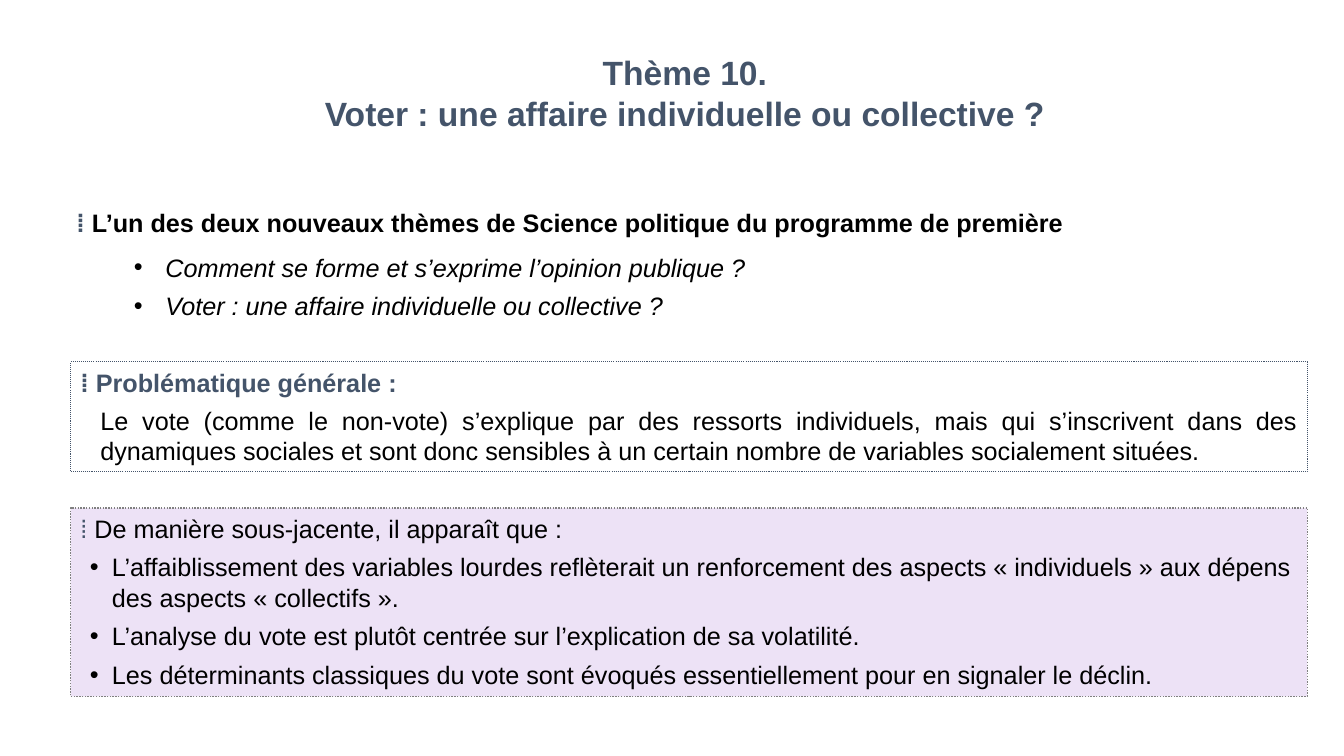
from lxml import etree
from pptx import Presentation
from pptx.dml.color import RGBColor
from pptx.enum import dml, shapes, text
from pptx.oxml.ns import qn
from pptx.util import Pt

HUES = {"slate": "44546A", "black": "000000", "lilac": "EDE2F6", "gray": "808080"}
MARK = "⁞ "


def hue(name):
    return RGBColor.from_string(HUES[name])


def write(shape, lines, size=18, bold=None, italic=None):
    """Fill a shape; each line is (runs, left, hang, bullet, align), runs being (text, colour)."""
    frame = shape.text_frame
    frame.word_wrap = True
    frame.auto_size = text.MSO_AUTO_SIZE.NONE
    frame.vertical_anchor = text.MSO_ANCHOR.TOP
    for i, (runs, left, hang, bullet, align) in enumerate(lines):
        para = frame.add_paragraph() if i else frame.paragraphs[0]
        para.alignment = align
        para.space_before = Pt(6 if i and shape != title else 0)
        props = para._p.get_or_add_pPr()
        props.set("marL", str(Pt(left)))
        props.set("indent", str(Pt(-hang)))
        if bullet:
            etree.SubElement(props, qn("a:buFont")).set("typeface", "Arial")
            etree.SubElement(props, qn("a:buChar")).set("char", "•")
        font = para.font
        font.name, font.size, font.bold, font.italic = "Arial", Pt(size), bold, italic
        for words, tint in runs:
            run = para.add_run()
            run.text = words
            run.font.color.rgb = hue(tint)


deck = Presentation()
deck.slide_width, deck.slide_height = Pt(960), Pt(540)
slide = deck.slides.add_slide(deck.slide_layouts[5])
LEFT, MID, JUST = text.PP_ALIGN.LEFT, text.PP_ALIGN.CENTER, text.PP_ALIGN.JUSTIFY

title = slide.shapes.title
title.left, title.top, title.width, title.height = Pt(47.5), Pt(33.8), Pt(883.4), Pt(65.5)
heads = ["Thème 10.", "Voter : une affaire individuelle ou collective ?"]
write(title, [([(head, "slate")], 0, 0, False, MID) for head in heads], size=24, bold=True)

# Framed boxes
frames = []
for top, height, fill, line, width in [
    (258.5, 78.5, None, "slate", 0.75),
    (362.9, 134.6, "lilac", "gray", 1),
]:
    box = slide.shapes.add_shape(
        shapes.MSO_SHAPE.RECTANGLE, Pt(50.4), Pt(top), Pt(883.4), Pt(height))
    box.shadow.inherit = False
    if fill:
        box.fill.solid()
        box.fill.fore_color.rgb = hue(fill)
    else:
        box.fill.background()
    box.line.color.rgb = hue(line)
    box.line.width = Pt(width)
    box.line.dash_style = dml.MSO_LINE.ROUND_DOT
    frames.append(box)
issue, notes = frames

write(issue, [
    ([(MARK + "Problématique générale :", "slate")], 0, 0, False, LEFT),
    ([("Le vote (comme le non-vote) s’explique par des ressorts individuels, mais qui "
       "s’inscrivent dans des dynamiques sociales et sont donc sensibles à un certain "
       "nombre de variables socialement situées.", "black")], 14.2, 0, False, JUST),
])
issue.text_frame.paragraphs[0].font.bold = True

points = [
    "L’affaiblissement des variables lourdes reflèterait un renforcement des aspects "
    "« individuels » aux dépens des aspects « collectifs ».",
    "L’analyse du vote est plutôt centrée sur l’explication de sa volatilité.",
    "Les déterminants classiques du vote sont évoqués essentiellement pour en signaler le déclin.",
]
intro = [(MARK, "slate"), ("De manière sous-jacente, il apparaît que :", "black")]
write(notes, [(intro, 0, 0, False, LEFT)]
      + [([(point, "black")], 22.5, 15.8, True, LEFT) for point in points])

# Opening statement and its two themes
lead = slide.shapes.add_textbox(Pt(47.5), Pt(144.7), Pt(749.5), Pt(28.8))
claim = "L’un des deux nouveaux thèmes de Science politique du programme de première"
write(lead, [([(MARK, "slate"), (claim, "black")], 0, 0, False, LEFT)], bold=True)

themes = slide.shapes.add_textbox(Pt(88.6), Pt(176.4), Pt(674.6), Pt(56.9))
asks = ["Comment se forme et s’exprime l’opinion publique ?", heads[1]]
write(themes, [([(ask, "black")], 22.5, 22.5, True, LEFT) for ask in asks], italic=True)

deck.save("out.pptx")
